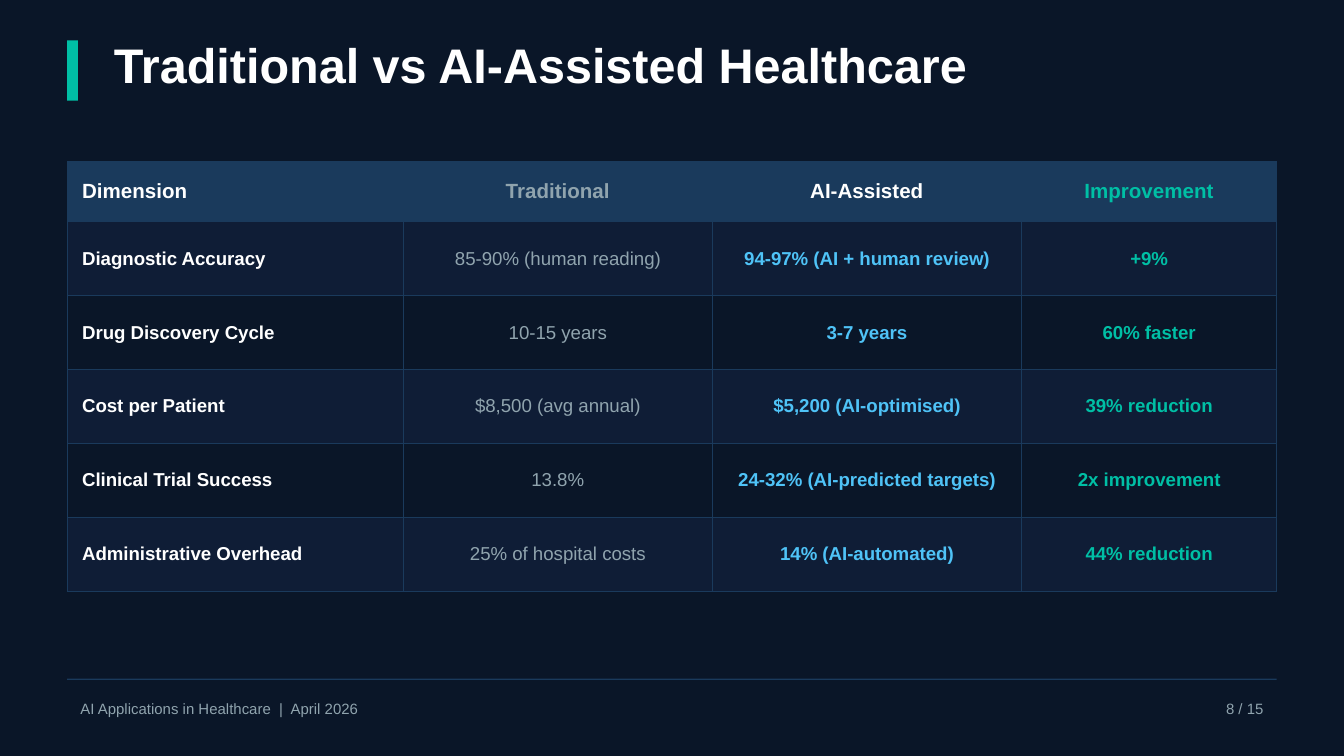
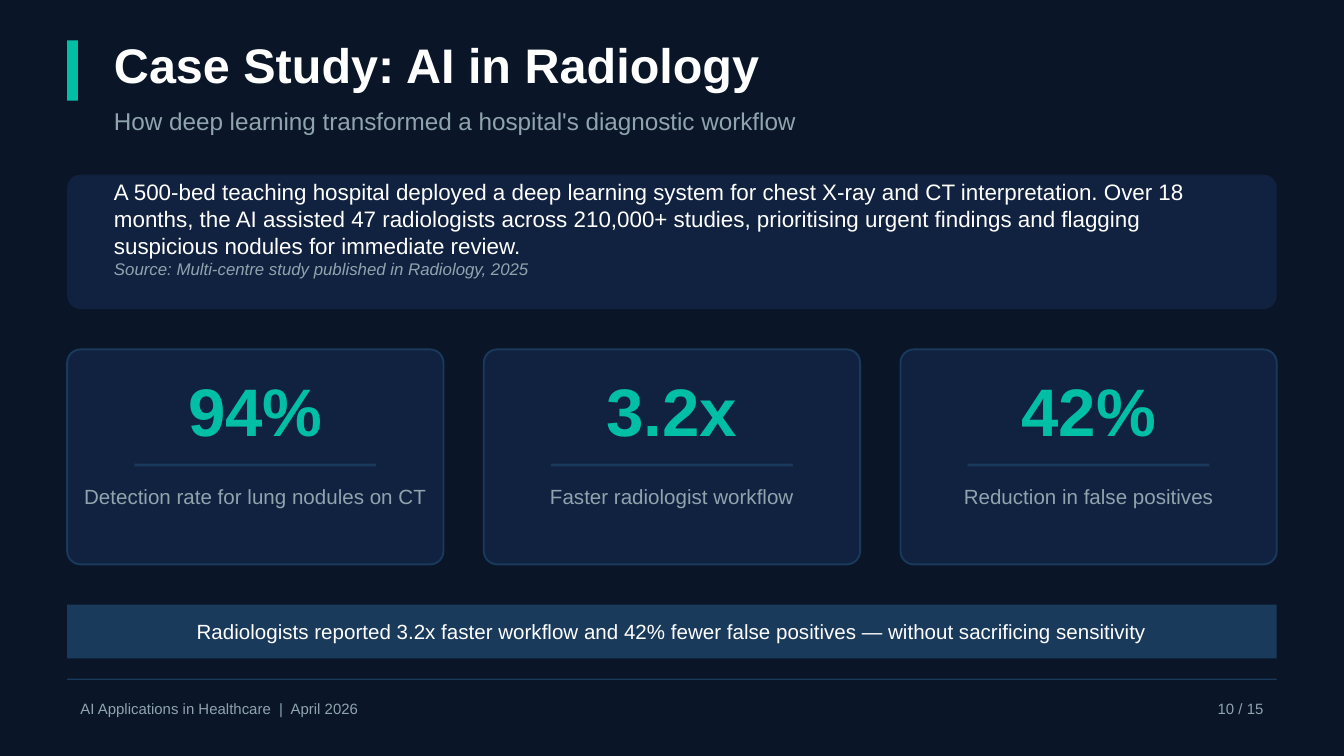
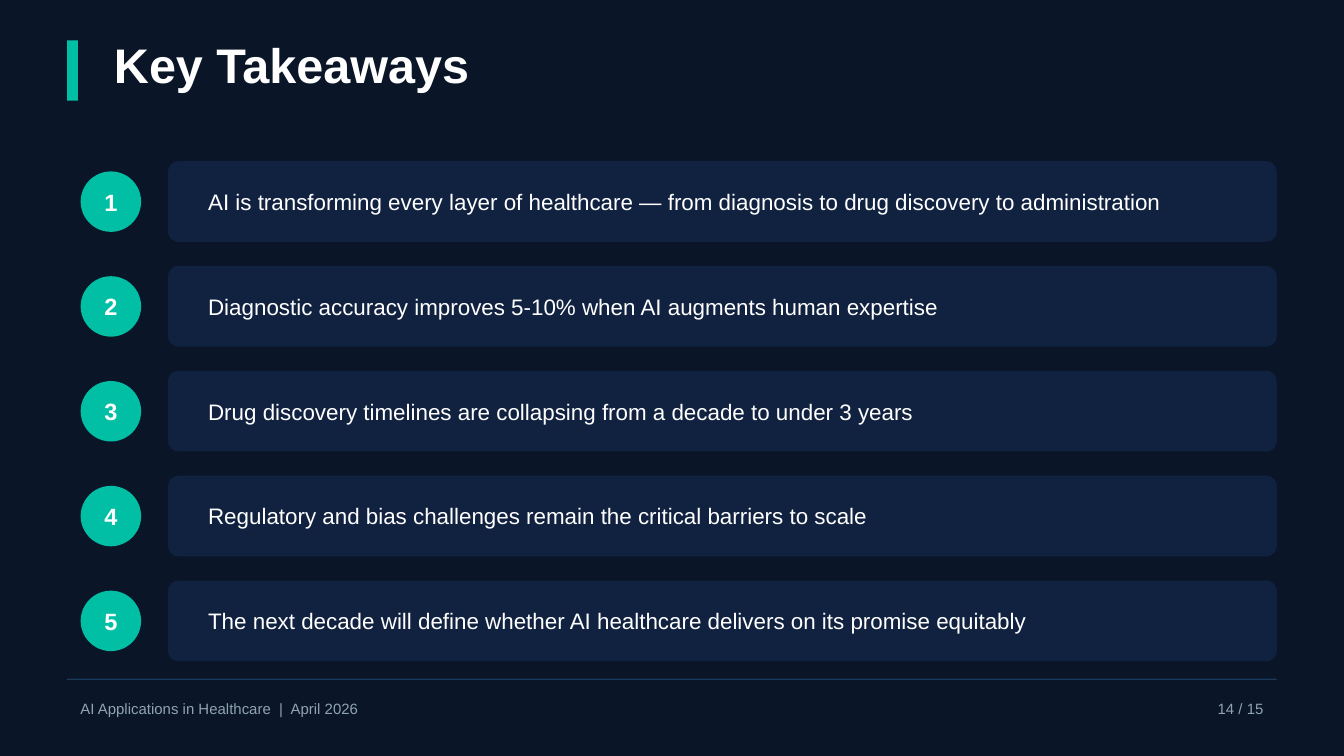
import dataclasses
import typing

import lxml.etree
import pptx
import pptx.dml.color
import pptx.enum.shapes
import pptx.enum.text
import pptx.oxml.ns
import pptx.slide
import pptx.util

Pt = pptx.util.Pt
Kind = pptx.enum.shapes.MSO_SHAPE
Align = pptx.enum.text.PP_ALIGN
Anchor = pptx.enum.text.MSO_ANCHOR

FONT = "Arial"
COLORS = {
    "page": "0A1628",
    "row": "0F1D36",
    "card": "112240",
    "edge": "1A3A5C",
    "teal": "00BFA5",
    "sky": "4FC3F7",
    "gray": "90A4AE",
    "white": "FFFFFF",
}
TOTAL = 15
LEFT, WIDTH = 36, 648


class Box(typing.NamedTuple):
    """Place and size in points."""
    x: float
    y: float
    w: float
    h: float


@dataclasses.dataclass(frozen=True)
class Style:
    size: float
    color: str = "white"
    bold: bool = False
    slant: bool = False
    align: Align = Align.LEFT
    anchor: Anchor = Anchor.MIDDLE


@dataclasses.dataclass(frozen=True)
class Column:
    width: float
    head: str
    style: Style


@dataclasses.dataclass(frozen=True)
class Stat:
    value: str
    label: str


TITLE = Style(26, bold=True)
LEAD = Style(13, "gray")
BODY = Style(12)
SOURCE = Style(9, "gray", slant=True)
FOOT = Style(8, "gray")
PAGE = Style(8, "gray", align=Align.RIGHT)
VALUE = Style(36, "teal", bold=True, align=Align.CENTER)
LABEL = Style(11, "gray", align=Align.CENTER, anchor=Anchor.TOP)
CLAIM = Style(11, align=Align.CENTER)
NUMBER = Style(12.6, bold=True, align=Align.CENTER)

COLUMNS = [
    Column(180, "Dimension", Style(10, bold=True)),
    Column(165.6, "Traditional", Style(10, "gray", align=Align.CENTER)),
    Column(165.6, "AI-Assisted", Style(10, "sky", True, align=Align.CENTER)),
    Column(136.8, "Improvement", Style(10, "teal", True, align=Align.CENTER)),
]
ROWS = [
    ("Diagnostic Accuracy", "85-90% (human reading)", "94-97% (AI + human review)", "+9%"),
    ("Drug Discovery Cycle", "10-15 years", "3-7 years", "60% faster"),
    ("Cost per Patient", "$8,500 (avg annual)", "$5,200 (AI-optimised)", "39% reduction"),
    ("Clinical Trial Success", "13.8%", "24-32% (AI-predicted targets)", "2x improvement"),
    ("Administrative Overhead", "25% of hospital costs", "14% (AI-automated)", "44% reduction"),
]
STATS = [
    Stat("94%", "Detection rate for lung nodules on CT"),
    Stat("3.2x", "Faster radiologist workflow"),
    Stat("42%", "Reduction in false positives"),
]
POINTS = [
    "AI is transforming every layer of healthcare — from diagnosis to drug discovery to administration",
    "Diagnostic accuracy improves 5-10% when AI augments human expertise",
    "Drug discovery timelines are collapsing from a decade to under 3 years",
    "Regulatory and bias challenges remain the critical barriers to scale",
    "The next decade will define whether AI healthcare delivers on its promise equitably",
]


def paint(fill, color: str) -> None:
    fill.solid()
    fill.fore_color.rgb = pptx.dml.color.RGBColor.from_string(COLORS[color])


def write(frame, text: str, style: Style) -> None:
    part = frame.paragraphs[0]
    part.alignment = style.align
    run = part.add_run()
    run.text = text
    font = run.font
    font.name, font.size = FONT, Pt(style.size)
    font.bold, font.italic = style.bold, style.slant
    paint(font.fill, style.color)


def add_text(slide: pptx.slide.Slide, box: Box, text: str, style: Style) -> None:
    frame = slide.shapes.add_textbox(*map(Pt, box)).text_frame
    frame.word_wrap = True
    frame.vertical_anchor = style.anchor
    write(frame, text, style)


def add_block(slide: pptx.slide.Slide, box: Box, color: str, kind: Kind = Kind.RECTANGLE,
              curve: float = 0, edge: str = "") -> None:
    """Draw a filled shape; curve is its corner radius in points."""
    shape = slide.shapes.add_shape(kind, *map(Pt, box))
    shape.shadow.inherit = False
    paint(shape.fill, color)
    if curve:
        shape.adjustments[0] = curve / min(box.w, box.h)
    if edge:
        paint(shape.line.fill, edge)
        shape.line.width = Pt(1)
    else:
        shape.line.fill.background()


def add_edges(cell) -> None:
    """Give a table cell a thin line on all four sides."""
    props = cell._tc.get_or_add_tcPr()
    name = pptx.oxml.ns.qn
    for side in "LRTB":
        line = lxml.etree.SubElement(props, name(f"a:ln{side}"), w=str(Pt(0.5)))
        fill = lxml.etree.SubElement(line, name("a:solidFill"))
        lxml.etree.SubElement(fill, name("a:srgbClr"), val=COLORS["edge"])


def fill_cell(cell, text: str, style: Style, color: str) -> None:
    add_edges(cell)
    paint(cell.fill, color)
    cell.margin_left = cell.margin_right = Pt(8)
    cell.margin_top = cell.margin_bottom = Pt(4)
    cell.vertical_anchor = style.anchor
    write(cell.text_frame, text, style)


def add_slide(deck, title: str, page: int, lead: str = "") -> pptx.slide.Slide:
    """Add a slide with the shared title and footer."""
    slide = deck.slides.add_slide(deck.slide_layouts[6])
    paint(slide.background.fill, "page")
    add_block(slide, Box(LEFT, 21.6, 5.76, 32.4), "teal")
    add_text(slide, Box(54, 14.4, 576, 39.6), title, TITLE)
    if lead:
        add_text(slide, Box(54, 54, 576, 21.6), lead, LEAD)
    add_text(slide, Box(LEFT, 367.2, 432, 25.2), "AI Applications in Healthcare  |  April 2026", FOOT)
    add_text(slide, Box(612, 367.2, 72, 25.2), f"{page} / {TOTAL}", PAGE)
    add_block(slide, Box(LEFT, 363.6, WIDTH, 0.72), "edge")
    return slide


def add_grid(slide: pptx.slide.Slide) -> None:
    head, step = 32.4, 39.6
    box = Box(LEFT, 86.4, WIDTH, head + step * len(ROWS))
    table = slide.shapes.add_table(len(ROWS) + 1, len(COLUMNS), *map(Pt, box)).table
    for row in table.rows:
        row.height = Pt(step)
    table.rows[0].height = Pt(head)
    for c, col in enumerate(COLUMNS):
        table.columns[c].width = Pt(col.width)
        tint = "white" if col.style.color == "sky" else col.style.color
        top = dataclasses.replace(col.style, size=11, color=tint, bold=True)
        fill_cell(table.cell(0, c), col.head, top, "edge")
        for r, row in enumerate(ROWS):
            fill_cell(table.cell(r + 1, c), row[c], col.style, "page" if r % 2 else "row")


def add_stat(slide: pptx.slide.Slide, x: float, stat: Stat, wide: float) -> None:
    add_block(slide, Box(x, 187.2, wide, 115.2), "card", Kind.ROUNDED_RECTANGLE, 7.2, "edge")
    add_text(slide, Box(x, 194.4, wide, 50.4), stat.value, VALUE)
    add_block(slide, Box(x + 36, 248.4, wide - 72, 1.44), "edge")
    add_text(slide, Box(x, 255.6, wide, 36), stat.label, LABEL)


def add_study(slide: pptx.slide.Slide) -> None:
    add_block(slide, Box(LEFT, 93.6, WIDTH, 72), "card", Kind.ROUNDED_RECTANGLE, 7.2)
    add_text(
        slide, Box(54, 97.2, 612, 39.6),
        "A 500-bed teaching hospital deployed a deep learning system for chest X-ray and CT "
        "interpretation. Over 18 months, the AI assisted 47 radiologists across 210,000+ studies, "
        "prioritising urgent findings and flagging suspicious nodules for immediate review.", BODY)
    add_text(slide, Box(54, 133.2, 432, 21.6),
             "Source: Multi-centre study published in Radiology, 2025", SOURCE)
    gap = 21.6
    wide = (WIDTH - gap * (len(STATS) - 1)) / len(STATS)
    for i, stat in enumerate(STATS):
        add_stat(slide, LEFT + i * (wide + gap), stat, wide)
    add_block(slide, Box(LEFT, 324, WIDTH, 28.8), "edge")
    add_text(slide, Box(50.4, 324, 619.2, 28.8),
             "Radiologists reported 3.2x faster workflow and 42% fewer false positives "
             "— without sacrificing sensitivity", CLAIM)


def add_points(slide: pptx.slide.Slide) -> None:
    high, step, size = 43.2, 56.16, 32.4
    for i, point in enumerate(POINTS):
        y = 86.4 + i * step
        disc = Box(43.2, y + (high - size) / 2, size, size)
        add_block(slide, disc, "teal", Kind.OVAL)
        add_text(slide, disc, str(i + 1), NUMBER)
        add_block(slide, Box(90, y, 594, high), "card", Kind.ROUNDED_RECTANGLE, 5.76)
        add_text(slide, Box(104.4, y, 565.2, high), point, BODY)


def main() -> None:
    deck = pptx.Presentation()
    deck.slide_width, deck.slide_height = Pt(720), Pt(405)
    add_grid(add_slide(deck, "Traditional vs AI-Assisted Healthcare", 8))
    add_study(add_slide(deck, "Case Study: AI in Radiology", 10,
                        "How deep learning transformed a hospital's diagnostic workflow"))
    add_points(add_slide(deck, "Key Takeaways", 14))
    deck.save("out.pptx")


if __name__ == "__main__":
    main()
